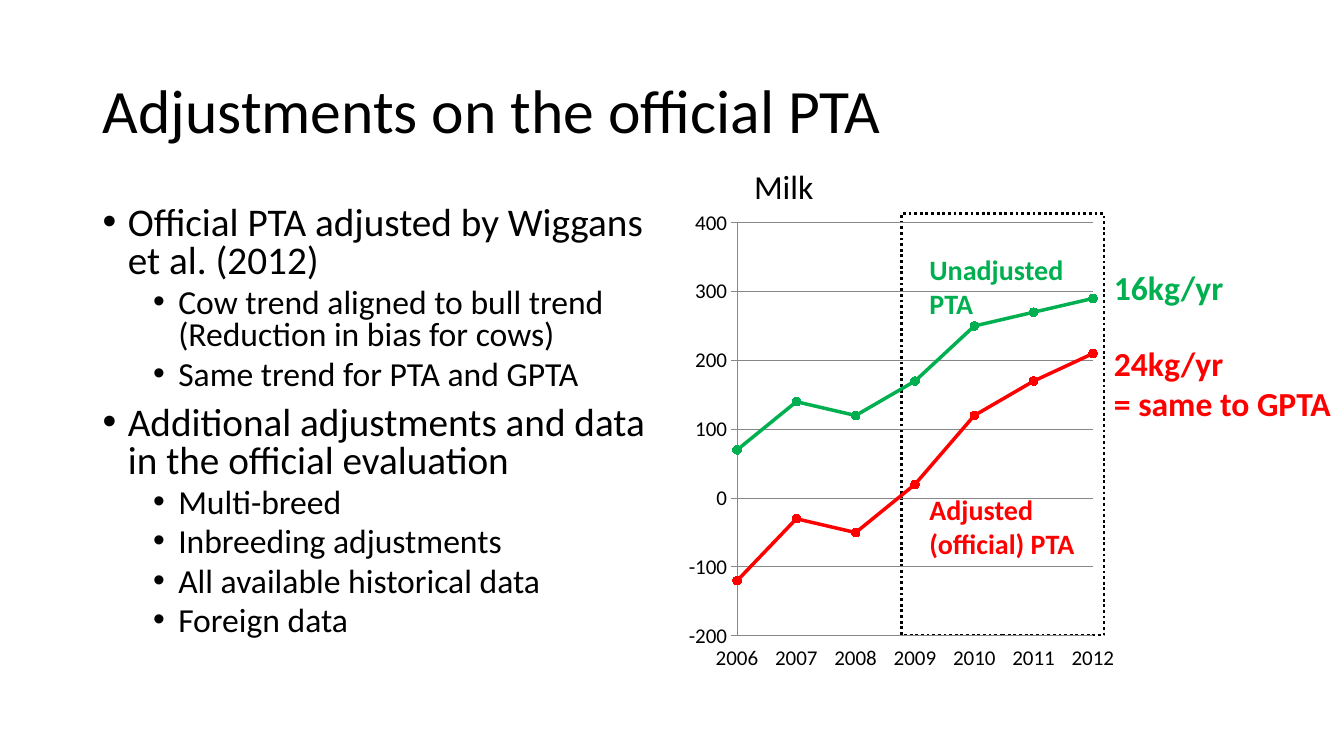
import pptx
import pptx.util
import pptx.chart.data
import pptx.dml.color
import pptx.enum.chart
import pptx.enum.dml
import pptx.enum.shapes
import pptx.enum.text
import pptx.oxml
import pptx.oxml.ns

Inches = pptx.util.Inches
Pt = pptx.util.Pt
RGBColor = pptx.dml.color.RGBColor
BLACK = RGBColor(0x00, 0x00, 0x00)
GRAY = RGBColor(0x87, 0x87, 0x87)
RED = RGBColor(0xFF, 0x00, 0x00)
GREEN = RGBColor(0x00, 0xB0, 0x50)
FONT = "Calibri"

POINTS = [
    (0, "Official PTA adjusted by Wiggans et al. (2012)"),
    (1, "Cow trend aligned to bull trend\n(Reduction in bias for cows)"),
    (1, "Same trend for PTA and GPTA"),
    (0, "Additional adjustments and data in the official evaluation"),
    (1, "Multi-breed"),
    (1, "Inbreeding adjustments"),
    (1, "All available historical data"),
    (1, "Foreign data"),
]
YEARS = [str(year) for year in range(2006, 2013)]
TRENDS = [
    ("Adjusted PTA", RED, (-120, -30, -50, 20, 120, 170, 210)),
    ("Unadjusted PTA", GREEN, (70, 140, 120, 170, 250, 270, 290)),
]
LABELS = [
    ((10.95, 2.6, 1.74, 0.5), ["16kg/yr"], 24, GREEN),
    ((10.95, 3.35, 2.39, 0.91), ["24kg/yr", "= same to GPTA"], 24, RED),
    ((9.12, 2.46, 1.72, 0.77), ["Unadjusted\nPTA"], 20, GREEN),
    ((9.12, 4.84, 2.42, 0.77), ["Adjusted\n(official) PTA"], 20, RED),
]


class Deck:
    def __init__(self, wide, high):
        self.show = pptx.Presentation()
        self.show.slide_width = Inches(wide)
        self.show.slide_height = Inches(high)
        self.slide = self.show.slides.add_slide(self.show.slide_layouts[6])

    def style(self, font, size, color=BLACK, bold=False):
        font.name = FONT
        font.size = Pt(size)
        font.bold = bold
        font.color.rgb = color

    def text(self, box, lines, size, color=BLACK, bold=False):
        frame = self.slide.shapes.add_textbox(*map(Inches, box)).text_frame
        frame.word_wrap = True
        for row, line in enumerate(lines):
            para = frame.add_paragraph() if row else frame.paragraphs[0]
            para.text = line
            self.style(para.font, size, color, bold)
        return frame

    def title(self, box, line):
        frame = self.text(box, [line], 44)
        frame.vertical_anchor = pptx.enum.text.MSO_ANCHOR.MIDDLE
        frame.paragraphs[0].line_spacing = 0.9

    def bullets(self, box, items):
        frame = self.text(box, [line for _, line in items], 28)
        for para, (level, _) in zip(frame.paragraphs, items):
            para.level = level
            para.font.size = Pt(28 - 4 * level)
            para.line_spacing = 0.8
            para.space_before = Pt(10 - 5 * level)
            props = para._p.get_or_add_pPr()
            props.set("marL", str(Inches(0.25 + 0.5 * level)))
            props.set("indent", str(Inches(-0.25)))
            for tag, key, value in (("buFont", "typeface", "Arial"), ("buChar", "char", "•")):
                mark = pptx.oxml.parse_xml(
                    f'<a:{tag} {pptx.oxml.ns.nsdecls("a")} {key}="{value}"/>')
                props.insert_element_before(mark, "a:tabLst", "a:defRPr", "a:extLst")

    def frame(self, box):
        rect = self.slide.shapes.add_shape(
            pptx.enum.shapes.MSO_SHAPE.RECTANGLE, *map(Inches, box))
        rect.shadow.inherit = False
        rect.fill.background()
        rect.line.color.rgb = BLACK
        rect.line.width = Pt(2)
        rect.line.dash_style = pptx.enum.dml.MSO_LINE.ROUND_DOT

    def chart(self, box, plot, years, trends):
        kinds = pptx.enum.chart
        data = pptx.chart.data.CategoryChartData()
        data.categories = years
        for name, _, values in trends:
            data.add_series(name, values)
        chart = self.slide.shapes.add_chart(
            kinds.XL_CHART_TYPE.LINE_MARKERS, *map(Inches, box), data).chart
        chart.has_legend = False
        chart.has_title = False
        self.style(chart.font, 15)
        chart.plots[0].vary_by_categories = False
        for line, (_, color, _) in zip(chart.plots[0].series, trends):
            line.smooth = False
            line.format.line.color.rgb = color
            line.format.line.width = Pt(2.5)
            line.marker.style = kinds.XL_MARKER_STYLE.CIRCLE
            line.marker.size = 6
            line.marker.format.fill.solid()
            line.marker.format.fill.fore_color.rgb = color
            line.marker.format.line.color.rgb = color
        self.axes(chart)
        self.place(chart, box, plot)

    def axes(self, chart):
        ticks = pptx.enum.chart.XL_TICK_MARK
        across, up = chart.category_axis, chart.value_axis
        for axis, tick in ((across, ticks.NONE), (up, ticks.CROSS)):
            axis.major_tick_mark = tick
            axis.minor_tick_mark = ticks.NONE
            axis.format.line.color.rgb = GRAY
            self.style(axis.tick_labels.font, 15)
        across.has_major_gridlines = False
        across.tick_label_position = pptx.enum.chart.XL_TICK_LABEL_POSITION.LOW
        up.minimum_scale = -200
        up.maximum_scale = 400
        up.major_unit = 100
        up.has_major_gridlines = True
        up.major_gridlines.format.line.color.rgb = GRAY
        names = pptx.oxml.ns
        tree = up._element
        for old in tree.findall(names.qn("c:crossBetween")):
            tree.remove(old)
        tree.find(names.qn("c:crosses")).addnext(pptx.oxml.parse_xml(
            f'<c:crossBetween {names.nsdecls("c")} val="midCat"/>'))

    def place(self, chart, box, plot):
        names = pptx.oxml.ns
        left, top, wide, high = box
        parts = {"x": (plot[0] - left) / wide, "y": (plot[1] - top) / high,
                 "w": plot[2] / wide, "h": plot[3] / high}
        modes = "".join(f'<c:{key}Mode val="edge"/>' for key in "xy")
        sizes = "".join(f'<c:{key} val="{part:.4f}"/>' for key, part in parts.items())
        area = chart._chartSpace.chart.plotArea
        for old in area.findall(names.qn("c:layout")):
            area.remove(old)
        area.insert(0, pptx.oxml.parse_xml(
            f'<c:layout {names.nsdecls("c")}><c:manualLayout>'
            f'<c:layoutTarget val="inner"/>{modes}{sizes}'
            '</c:manualLayout></c:layout>'))


def main():
    deck = Deck(13.33, 7.5)
    deck.title((0.92, 0.4, 11.5, 1.45), "Adjustments on the official PTA")
    deck.bullets((0.92, 2, 5.67, 4.76), POINTS)
    deck.frame((8.94, 2.12, 2.01, 4.18))
    deck.text((7.38, 1.6, 2.42, 0.5), ["Milk"], 24)
    deck.chart((6.75, 2, 4.39, 4.76), (7.31, 2.21, 3.53, 4.1), YEARS, TRENDS)
    for box, lines, size, color in LABELS:
        deck.text(box, lines, size, color, True)
    deck.show.save("out.pptx")


if __name__ == "__main__":
    main()
